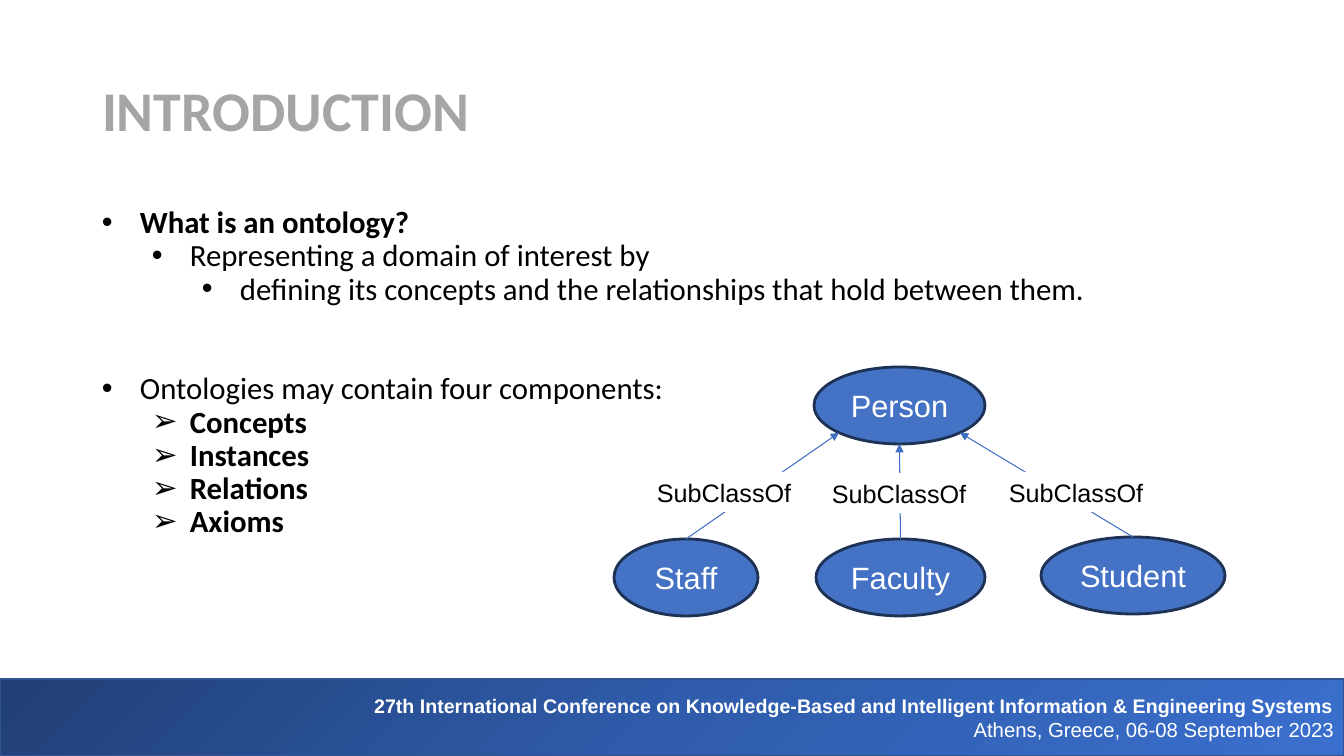
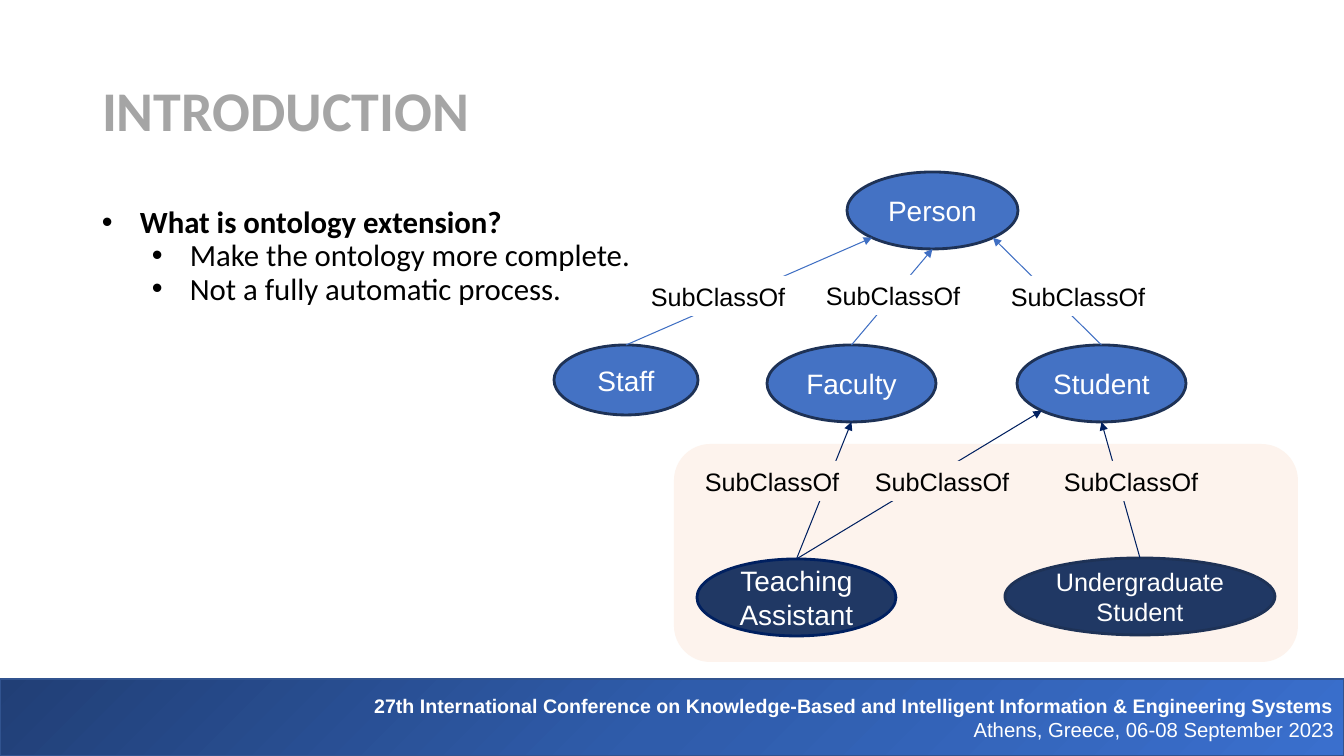
from copy import deepcopy
from math import cos, radians, sin

from lxml import etree
from pptx import Presentation
from pptx.dml.color import RGBColor
from pptx.enum.shapes import MSO_CONNECTOR, MSO_SHAPE
from pptx.enum.text import MSO_ANCHOR, MSO_AUTO_SIZE, PP_ALIGN
from pptx.oxml.ns import qn
from pptx.util import Emu, Pt

SLIDE_WIDTH, SLIDE_HEIGHT = 1344, 756
EMU_PER_PX = 12192000 / SLIDE_WIDTH
TITLE_ONLY = 5

OVAL, RECTANGLE, ROUNDED = MSO_SHAPE.OVAL, MSO_SHAPE.RECTANGLE, MSO_SHAPE.ROUNDED_RECTANGLE
STRAIGHT = MSO_CONNECTOR.STRAIGHT
LEFT, CENTER, RIGHT = PP_ALIGN.LEFT, PP_ALIGN.CENTER, PP_ALIGN.RIGHT
TOP, MIDDLE = MSO_ANCHOR.TOP, MSO_ANCHOR.MIDDLE

WHITE = RGBColor(0xFF, 0xFF, 0xFF)
BLACK = RGBColor(0x00, 0x00, 0x00)
GRAY = RGBColor(0xA5, 0xA5, 0xA5)
BLUE = RGBColor(0x44, 0x72, 0xC4)
LINK_BLUE = RGBColor(0x3F, 0x6F, 0xC3)
OUTLINE = RGBColor(0x1E, 0x32, 0x56)
NAVY = RGBColor(0x20, 0x38, 0x64)
DEEP_NAVY = RGBColor(0x00, 0x20, 0x60)
PEACH = RGBColor(0xFD, 0xF3, 0xED)
BAND_LINE = RGBColor(0x31, 0x53, 0x8F)
BAND_STOPS = [
    (0, RGBColor(0x21, 0x3F, 0x76)),
    (0.5, RGBColor(0x2F, 0x5C, 0xAB)),
    (1, RGBColor(0x3A, 0x6F, 0xCD)),
]

HEADING_FONT, DIAGRAM_FONT = "Calibri", "Arial"
DOT, ARROW = "•", "➢"
NODE_HEIGHT = 77
LABEL_WIDTH, LABEL_HEIGHT = 157, 40
FOOTER = [
    ("27th International Conference on Knowledge-Based and Intelligent "
     "Information & Engineering Systems", 14, True),
    ("Athens, Greece, 06-08 September 2023", 14.5, False),
]


def px(length):
    return Emu(round(length * EMU_PER_PX))


def box(*lengths):
    return [px(length) for length in lengths]


def format_text(paragraph, font_name, size, color, bold=False, alignment=LEFT):
    paragraph.alignment = alignment
    for run in paragraph.runs:
        run.font.name = font_name
        run.font.size = Pt(size)
        run.font.color.rgb = color
        run.font.bold = bold


def add_bullet(paragraph, character, level):
    """Give the paragraph a hanging bullet, indented by its level."""
    properties = paragraph._p.get_or_add_pPr()
    properties.set("marL", str(px(38 + 50 * level)))
    properties.set("indent", str(px(-38)))
    etree.SubElement(properties, qn("a:buFont"), typeface=DIAGRAM_FONT)
    etree.SubElement(properties, qn("a:buChar"), char=character)


class Deck:
    def __init__(self):
        self.presentation = Presentation()
        self.presentation.slide_width = px(SLIDE_WIDTH)
        self.presentation.slide_height = px(SLIDE_HEIGHT)
        self.slide = None

    def new_slide(self, title):
        layout = self.presentation.slide_layouts[TITLE_ONLY]
        self.slide = self.presentation.slides.add_slide(layout)
        shape = self.slide.shapes.title
        shape.left, shape.top, shape.width, shape.height = box(92, 40, 1159, 146)
        frame = shape.text_frame
        frame.text = title
        frame.auto_size = MSO_AUTO_SIZE.NONE
        frame.vertical_anchor = MIDDLE
        frame.paragraphs[0].line_spacing = 0.9
        format_text(frame.paragraphs[0], HEADING_FONT, 40, GRAY, True)
        self.footer()

    def shape(self, kind, bounds, fill=None, line=None, line_width=1):
        shape = self.slide.shapes.add_shape(kind, *box(*bounds))
        shape.shadow.inherit = False
        if fill is not None:
            shape.fill.solid()
            shape.fill.fore_color.rgb = fill
        if line is None:
            shape.line.fill.background()
        else:
            shape.line.color.rgb = line
            shape.line.width = Pt(line_width)
        return shape

    def footer(self):
        band = self.shape(RECTANGLE, (0, 679, SLIDE_WIDTH, 77), line=BAND_LINE)
        band.fill.gradient()
        band.fill.gradient_angle = 315
        stop_list = band._element.spPr.find(".//" + qn("a:gsLst"))
        stop_list.insert(1, deepcopy(stop_list[0]))
        for stop, (position, color) in zip(band.fill.gradient_stops, BAND_STOPS):
            stop.position = position
            stop.color.rgb = color
        frame = band.text_frame
        frame.vertical_anchor = MIDDLE
        frame.text = "\n".join(text for text, _, _ in FOOTER)
        for paragraph, (_, size, bold) in zip(frame.paragraphs, FOOTER):
            format_text(paragraph, DIAGRAM_FONT, size, WHITE, bold, RIGHT)

    def bullets(self, items):
        """Write (level, bullet, bold, points before, text) items as a list."""
        frame = self.slide.shapes.add_textbox(*box(92, 202, 1159, 470)).text_frame
        frame.word_wrap = True
        frame.text = "\n".join(item[-1] for item in items)
        for paragraph, (level, character, bold, before, _) in zip(frame.paragraphs, items):
            paragraph.level = level
            paragraph.line_spacing = 0.9
            paragraph.space_before = Pt(before)
            format_text(paragraph, HEADING_FONT, 22, BLACK, bold)
            add_bullet(paragraph, character, level)

    def node(self, text, left, top, width, size, height=NODE_HEIGHT, fill=BLUE, line=OUTLINE):
        node = self.shape(OVAL, (left, top, width, height), fill, line, 2)
        frame = node.text_frame
        frame.margin_left = frame.margin_right = 0
        frame.word_wrap = True
        frame.vertical_anchor = MIDDLE
        frame.text = text
        format_text(frame.paragraphs[0], DIAGRAM_FONT, size, WHITE, alignment=CENTER)
        return node

    def subclass_link(self, child, parent, side, label_left, label_top,
                      color=LINK_BLUE, label_fill=WHITE):
        """Join child to parent's lower left (-1), bottom (0) or lower right (1)."""
        angle = radians(45 * side)
        end_x = parent.left + parent.width / 2 * (1 + sin(angle))
        end_y = parent.top + parent.height / 2 * (1 + cos(angle))
        connector = self.slide.shapes.add_connector(
            STRAIGHT, Emu(child.left + child.width // 2), child.top,
            Emu(round(end_x)), Emu(round(end_y)))
        connector.line.color.rgb = color
        connector.line.width = Pt(0.75)
        properties = connector._element.spPr
        etree.SubElement(properties.find(qn("a:ln")), qn("a:tailEnd"), type="triangle")
        etree.SubElement(properties, qn("a:effectLst"))

        label = self.shape(
            RECTANGLE, (label_left, label_top, LABEL_WIDTH, LABEL_HEIGHT), label_fill)
        frame = label.text_frame
        frame.word_wrap = True
        frame.vertical_anchor = TOP
        frame.text = "SubClassOf"
        format_text(frame.paragraphs[0], DIAGRAM_FONT, 18, BLACK)


def build_ontology_slide(deck):
    deck.new_slide("INTRODUCTION")
    components = ["Concepts", "Instances", "Relations", "Axioms"]
    deck.bullets([
        (0, DOT, True, 0, "What is an ontology?"),
        (1, DOT, False, 0, "Representing a domain of interest by"),
        (2, DOT, False, 0,
         "defining its concepts and the relationships that hold between them."),
        (0, DOT, False, 47.5, "Ontologies may contain four components:"),
        *[(1, ARROW, True, 0, component) for component in components],
    ])
    person = deck.node("Person", 814, 367, 171, 22)
    staff = deck.node("Staff", 614, 539, 144, 22)
    faculty = deck.node("Faculty", 816, 539, 169, 22)
    student = deck.node("Student", 1041, 537, 184, 22)
    deck.subclass_link(staff, person, -1, 647, 472)
    deck.subclass_link(faculty, person, 0, 822, 473)
    deck.subclass_link(student, person, 1, 999, 472)


def build_extension_slide(deck):
    deck.new_slide("INTRODUCTION")
    deck.shape(ROUNDED, (674, 444, 624, 218), PEACH)
    deck.bullets([
        (0, DOT, True, 0, "What is ontology extension?"),
        (1, DOT, False, 0, "Make the ontology more complete."),
        (1, DOT, False, 0, "Not a fully automatic process."),
    ])
    person = deck.node("Person", 847, 172, 171, 20)
    staff = deck.node("Staff", 554, 345, 144, 20, height=70)
    faculty = deck.node("Faculty", 767, 345, 169, 20)
    student = deck.node("Student", 1017, 345, 169, 20)
    assistant = deck.node("Teaching Assistant", 697, 559, 199, 20, fill=NAVY, line=DEEP_NAVY)
    undergraduate = deck.node("Undergraduate Student", 1005, 558, 270, 18, fill=NAVY)
    deck.subclass_link(staff, person, -1, 641, 276)
    deck.subclass_link(faculty, person, 0, 816, 275)
    deck.subclass_link(student, person, 1, 1001, 276)
    for child, parent, side, label_left in [
        (assistant, faculty, 0, 695),
        (assistant, student, -1, 865),
        (undergraduate, student, 0, 1054),
    ]:
        deck.subclass_link(child, parent, side, label_left, 461, DEEP_NAVY, PEACH)


def main():
    deck = Deck()
    build_ontology_slide(deck)
    build_extension_slide(deck)
    deck.presentation.save("out.pptx")


if __name__ == "__main__":
    main()
